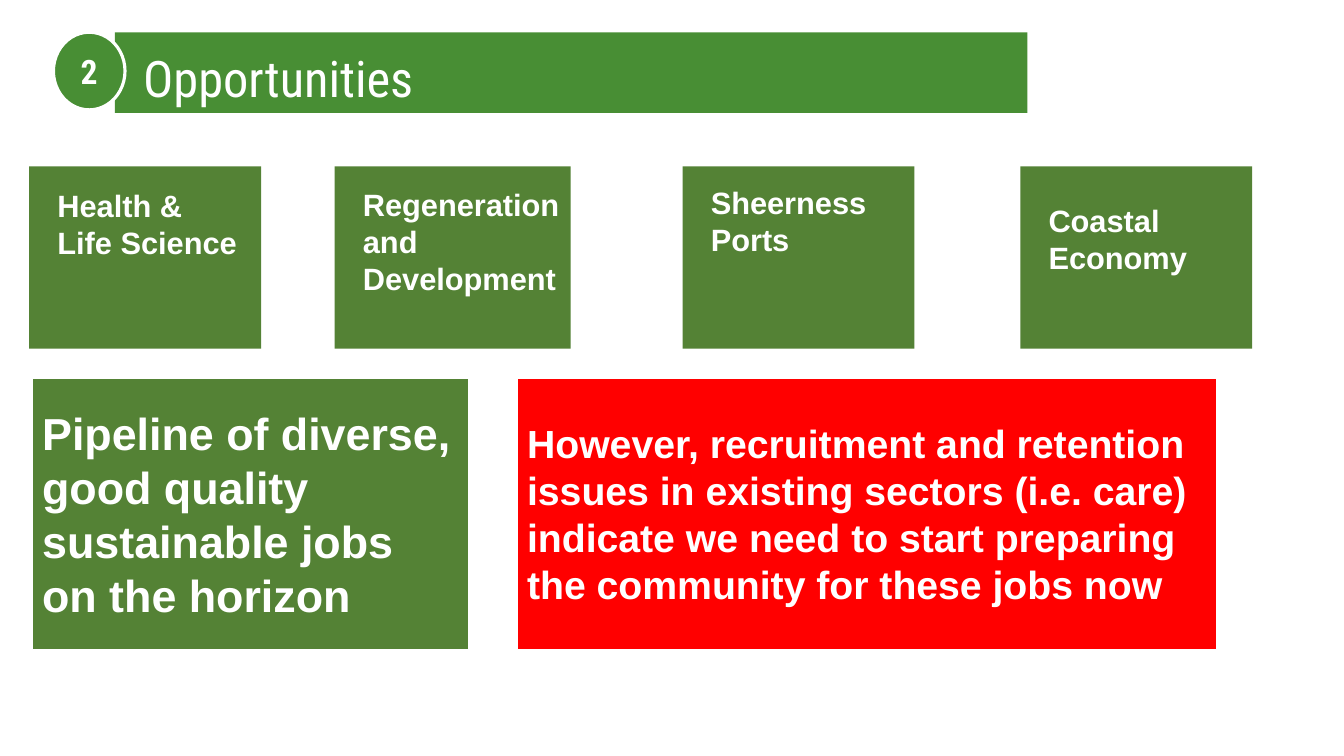
import pptx
import pptx.dml.color
import pptx.enum.shapes
import pptx.enum.text
import pptx.util

Inches = pptx.util.Inches
SHAPES = pptx.enum.shapes.MSO_SHAPE
ANCHOR = pptx.enum.text.MSO_ANCHOR
ALIGN = pptx.enum.text.PP_ALIGN

WHITE = "FFFFFF"
BANNER_GREEN = "488E34"
CARD_GREEN = "548235"
RED = "FF0000"


def colour(value):
    return pptx.dml.color.RGBColor.from_string(value)


def paint(shape, fill, line_width=None):
    shape.fill.solid()
    shape.fill.fore_color.rgb = colour(fill)
    if line_width is None:
        shape.line.fill.background()
    else:
        shape.line.color.rgb = colour(WHITE)
        shape.line.width = pptx.util.Pt(line_width)


def write(shape, lines, size, font="Arial", bold=True, anchor=ANCHOR.MIDDLE,
          align=ALIGN.LEFT, insets=(0.1, 0.05, 0.1, 0.05)):
    frame = shape.text_frame
    frame.word_wrap = True
    frame.auto_size = pptx.enum.text.MSO_AUTO_SIZE.NONE
    frame.vertical_anchor = anchor
    (frame.margin_left, frame.margin_top,
     frame.margin_right, frame.margin_bottom) = map(Inches, insets)
    for number, line in enumerate(lines):
        para = frame.add_paragraph() if number else frame.paragraphs[0]
        para.alignment = align
        span = para.add_run()
        span.text = line
        span.font.name = font
        span.font.size = pptx.util.Pt(size)
        span.font.bold = bold
        span.font.color.rgb = colour(WHITE)


def add_box(page, kind, box, fill, line_width=None):
    shape = page.shapes.add_shape(kind, *map(Inches, box))
    shape.shadow.inherit = False
    paint(shape, fill, line_width)
    return shape


def add_header(page, box, number, title):
    left, top, width, height = box
    # Title banner
    banner = page.shapes.title
    banner.left, banner.top, banner.width, banner.height = map(
        Inches, (left + 0.61, top, width - 0.61, height))
    paint(banner, BANNER_GREEN)
    write(banner, [title], 36, "Roboto Condensed", bold=False,
          anchor=ANCHOR.BOTTOM, insets=(0.28, 0.05, 0.1, 0.05))
    # Section number
    badge = add_box(page, SHAPES.OVAL, (left, top, 0.71, 0.77),
                    BANNER_GREEN, 2.25)
    write(badge, [number], 24, "Roboto Condensed", align=ALIGN.CENTER)


def add_sectors(page, box, sectors):
    left, top, height = box
    for offset, width, text_top, lines in sectors:
        card = add_box(page, SHAPES.RECTANGLE,
                       (left + offset, top, width, height), CARD_GREEN)
        write(card, lines, 22, anchor=ANCHOR.TOP,
              insets=(0.28, text_top, 0.05, 0.05))


def add_messages(page, box, messages):
    left, top, height = box
    for offset, width, fill, size, text in messages:
        panel = add_box(page, SHAPES.RECTANGLE,
                        (left + offset, top, width, height), fill, 0.75)
        write(panel, [text], size)


def main():
    deck = pptx.Presentation()
    deck.slide_width = Inches(13.33)
    deck.slide_height = Inches(7.5)
    page = deck.slides.add_slide(deck.slide_layouts[5])

    add_header(page, (0.53, 0.32, 9.66, 0.8), "2", "Opportunities")

    # Sector cards: offset, width, text top, lines
    add_sectors(page, (0.29, 1.65, 1.81), [
        (0, 2.3, 0.2, ["Health &", "Life Science"]),
        (3.03, 2.34, 0.19, ["Regeneration and Development"]),
        (6.48, 2.3, 0.17, ["Sheerness Ports"]),
        (9.83, 2.3, 0.35, ["Coastal Economy"]),
    ])

    # Message panels: offset, width, fill, text size, text
    add_messages(page, (0.32, 3.75, 2.69), [
        (0, 4.33, CARD_GREEN, 32,
         "Pipeline of diverse, good quality sustainable jobs on the horizon"),
        (4.81, 6.94, RED, 28,
         "However, recruitment and retention issues in existing sectors "
         "(i.e. care) indicate we need to start preparing the community "
         "for these jobs now"),
    ])

    deck.save("out.pptx")


if __name__ == "__main__":
    main()
